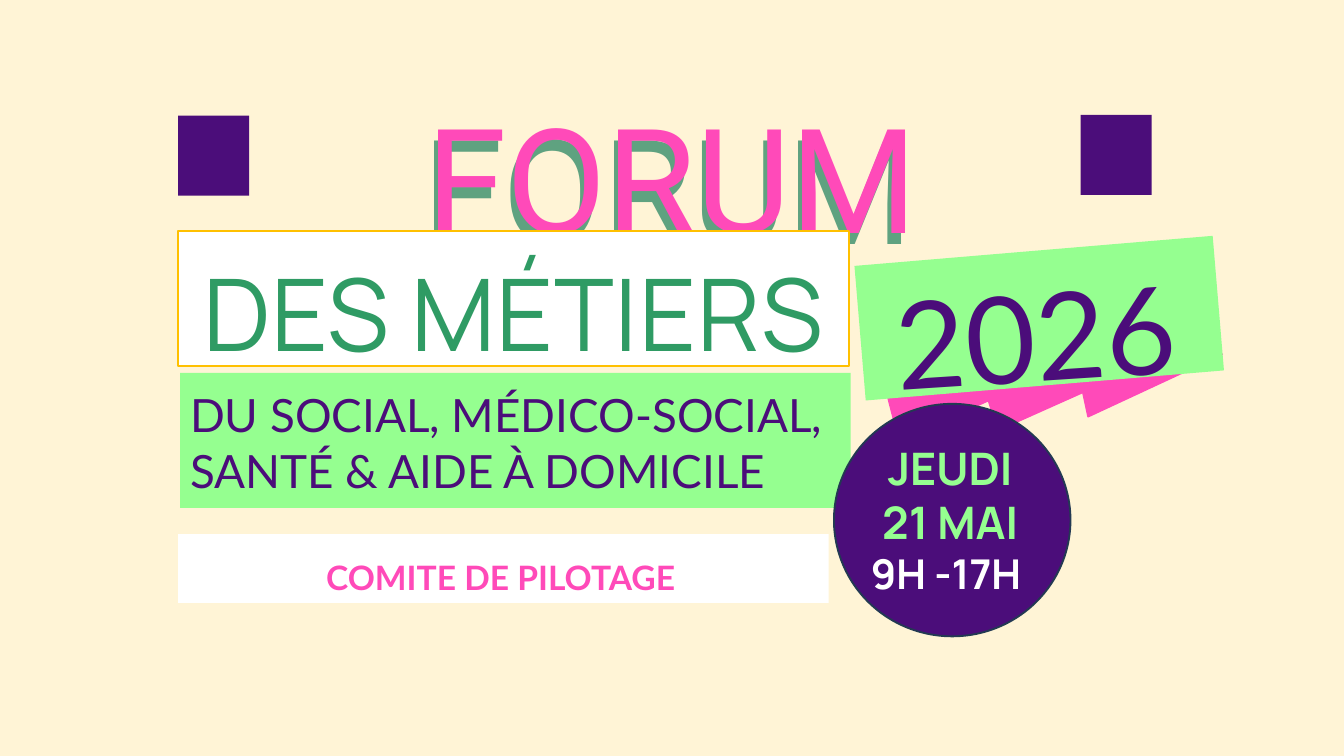
from pptx import Presentation
from pptx.dml.color import RGBColor
from pptx.enum.shapes import MSO_SHAPE
from pptx.enum.text import MSO_ANCHOR, PP_ALIGN
from pptx.util import Inches, Pt

RECTANGLE = MSO_SHAPE.RECTANGLE
ELLIPSE = MSO_SHAPE.OVAL
BOLT = MSO_SHAPE.LIGHTNING_BOLT
TOP = MSO_ANCHOR.TOP
LEFT = PP_ALIGN.LEFT
CENTER = PP_ALIGN.CENTER

COLORS = {
    "cream": "FFF4D6",
    "purple": "4B0D7A",
    "pink": "FF4AB9",
    "sage": "5FA280",
    "green": "2F9B64",
    "lime": "95FF90",
    "white": "FFFFFF",
    "amber": "FFC000",
    "navy": "233953",
}


def color(name):
    """Return the named palette colour."""
    return RGBColor.from_string(COLORS[name])


def add_block(page, kind, place, fill, line=None, rotation=0):
    """Add a filled preset shape, outlined only if a line colour is given."""
    block = page.shapes.add_shape(kind, *map(Inches, place))
    block.shadow.inherit = False
    block.rotation = rotation
    block.fill.solid()
    block.fill.fore_color.rgb = color(fill)
    if line:
        block.line.color.rgb = color(line)
        block.line.width = Pt(2)
    else:
        block.line.fill.background()
    return block


def write_lines(box, lines, font, align=CENTER, spacing=None, bold=False, inset=0, tracking=None):
    """Fill a box with one paragraph per (text, size, colour) line."""
    frame = box.text_frame
    frame.word_wrap = True
    frame.vertical_anchor = TOP
    frame.margin_left = frame.margin_right = Inches(inset)
    frame.margin_top = frame.margin_bottom = Inches(inset / 2)
    frame.text = "\n".join(text for text, _, _ in lines)
    for para, (_, size, tint) in zip(frame.paragraphs, lines):
        para.alignment = align
        if spacing:
            para.line_spacing = Pt(spacing)
        for span in para.runs:
            span.font.name = font
            span.font.size = Pt(size)
            span.font.bold = bold
            span.font.color.rgb = color(tint)
            if tracking:
                span._r.get_or_add_rPr().set("spc", str(tracking))


def add_text(page, place, lines, font, rotation=0, **style):
    """Add a text box holding the given lines."""
    box = page.shapes.add_textbox(*map(Inches, place))
    box.rotation = rotation
    write_lines(box, lines, font, **style)


def add_title(page):
    """Add the two corner squares, the doubled heading and its white banner."""
    for left, top in ((2.65, 1.72), (16.08, 1.71)):
        add_block(page, RECTANGLE, (left, top, 1.06, 1.19), "purple")
    for left, top, height, tint in ((3.95, 1.04, 3.11, "sage"), (4.01, 0.88, 2.95, "pink")):
        add_text(page, (left, top, 11.98, height), [("FORUM", 156, tint)], "Roboto", spacing=218.4)
    banner = add_block(page, RECTANGLE, (2.65, 3.44, 9.99, 2.01), "white", "amber")
    write_lines(banner, [("DES MÉTIERS", 107.3, "green")], "Manrope", spacing=150.2, tracking=110)


def add_committee(page):
    """Add the committee strip."""
    add_block(page, RECTANGLE, (2.65, 7.95, 9.68, 1.02), "white")
    add_text(page, (0.69, 7.84, 13.52, 0.93), [("COMITE DE PILOTAGE", 36, "pink")],
             "Lato", spacing=75.8, bold=True)


def add_year(page):
    """Add the tilted year card over its lightning bolt."""
    add_block(page, BOLT, (13.88, 3.33, 3, 4.84), "pink", "pink", rotation=292.1)
    add_block(page, RECTANGLE, (12.79, 3.73, 5.35, 2.01), "lime", rotation=355.2)
    add_text(page, (12.97, 3.52, 4.84, 2.42), [("2026", 129.7, "purple")],
             "Lato", rotation=356.3, spacing=181.6)


def add_sectors(page):
    """Add the green card naming the sectors."""
    add_block(page, RECTANGLE, (2.68, 5.55, 9.98, 2.01), "lime")
    sectors = ("DU SOCIAL, MÉDICO-SOCIAL,", "SANTÉ & AIDE À DOMICILE")
    add_text(page, (2.83, 5.75, 14.9, 1.65), [(text, 49.1, "purple") for text in sectors],
             "Lato", align=LEFT, spacing=59.4)


def add_date(page):
    """Add the round date badge."""
    add_block(page, ELLIPSE, (12.41, 6.01, 3.52, 3.46), "purple", "navy")
    lines = [("JEUDI", 48, "lime"), ("21 MAI", 48, "lime"), ("9H -17H ", 44, "white")]
    add_text(page, (10.39, 6.51, 7.5, 2.46), lines, "Manrope", bold=True, inset=0.1)


def main():
    """Build the forum slide and save it."""
    deck = Presentation()
    deck.slide_width = Inches(20)
    deck.slide_height = Inches(11.25)
    page = deck.slides.add_slide(deck.slide_layouts[6])
    page.background.fill.solid()
    page.background.fill.fore_color.rgb = color("cream")
    add_title(page)
    add_committee(page)
    add_year(page)
    add_sectors(page)
    add_date(page)
    deck.save("out.pptx")


if __name__ == "__main__":
    main()
